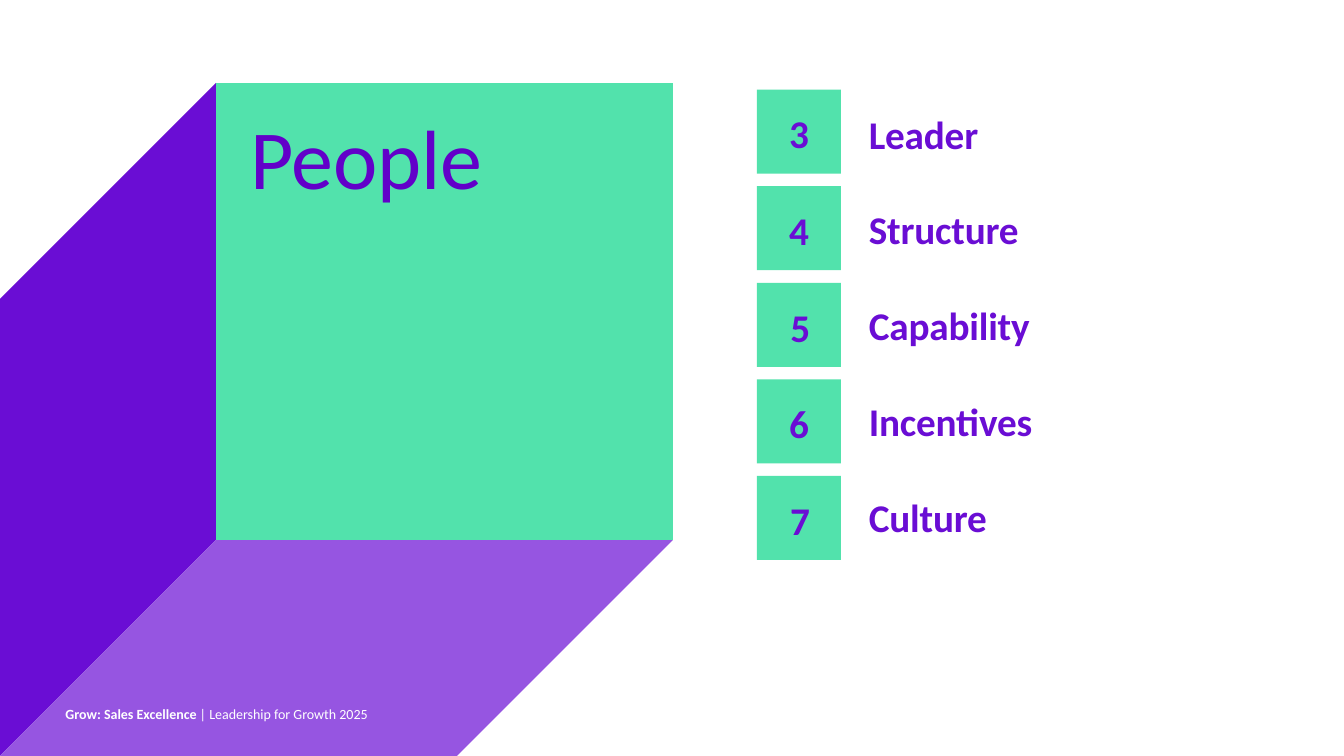
from pptx import Presentation
from pptx.dml.color import RGBColor
from pptx.enum import shapes, text
from pptx.util import Pt

GREEN, PURPLE, LILAC = "52E2AC", "6A0DD4", "9655E1"
TITLE_PURPLE, WHITE = "6200C9", "FFFFFF"
TOPICS = [
    ("3", "Leader", 0),
    ("4", "Structure", 0),
    ("5", "Capability", 2),
    ("6", "Incentives", 0),
    ("7", "Culture", 1.4),
]
LEFT, TOP, SIDE, DEPTH = 154.3, 59.3, 326.4, 154.3
RIGHT, BOTTOM = LEFT + SIDE, TOP + SIDE


def colour(hex_string):
    return RGBColor.from_string(hex_string)


def paint(shape, fill):
    shape.shadow.inherit = False
    shape.fill.solid()
    shape.fill.fore_color.rgb = colour(fill)
    shape.line.fill.background()


def write(shape, runs, size, hue, inset=0, indent=0, spacing=0,
          align=text.PP_ALIGN.LEFT, anchor=text.MSO_ANCHOR.TOP):
    frame = shape.text_frame
    frame.word_wrap = True
    frame.vertical_anchor = anchor
    frame.margin_left = frame.margin_right = frame.margin_bottom = 0
    frame.margin_top = Pt(inset)
    paragraph = frame.paragraphs[0]
    paragraph.alignment = align
    paragraph._p.get_or_add_pPr().set("marL", str(Pt(indent)))
    font = paragraph.font
    font.name, font.size, font.color.rgb = "Calibri", Pt(size), colour(hue)
    for words, bold in runs:
        run = paragraph.add_run()
        run.text = words
        run.font.bold = bold
        if spacing:
            run._r.get_or_add_rPr().set("spc", str(spacing))


def add_square(slide, left, top, side):
    square = slide.shapes.add_shape(
        shapes.MSO_SHAPE.RECTANGLE, Pt(left), Pt(top), Pt(side), Pt(side))
    paint(square, GREEN)
    return square


def add_label(slide, left, top, width, height):
    return slide.shapes.add_textbox(Pt(left), Pt(top), Pt(width), Pt(height))


def add_face(slide, corners, fill):
    points = [(Pt(x), Pt(y)) for x, y in corners]
    builder = slide.shapes.build_freeform(*points[0])
    builder.add_line_segments(points[1:], close=True)
    paint(builder.convert_to_shape(), fill)


def add_cube(slide):
    add_face(slide, [(LEFT, TOP), (0, TOP + DEPTH), (0, 540), (LEFT, BOTTOM)], PURPLE)
    add_face(slide, [(RIGHT, BOTTOM), (LEFT, BOTTOM), (0, 540), (SIDE, 540)], LILAC)
    front = add_square(slide, LEFT, TOP, SIDE)
    write(front, [("People", False)], 60, TITLE_PURPLE,
          inset=16, indent=24.5, spacing=-10)


def add_topic(slide, index, number, name, indent):
    badge = add_square(slide, 540.7, 64 + 69 * index, 60)
    write(badge, [(number, True)], 28, PURPLE, inset=14.4, indent=indent,
          spacing=-30, align=text.PP_ALIGN.CENTER)
    label = add_label(slide, 619.9, 77.8 + 68.4 * index, 185, 34.6)
    write(label, [(name, True)], 28, PURPLE, inset=0.7, indent=0.7, spacing=-10)


def main():
    deck = Presentation()
    deck.slide_width, deck.slide_height = Pt(960), Pt(540)
    slide = deck.slides.add_slide(deck.slide_layouts[6])
    add_cube(slide)
    for index, topic in enumerate(TOPICS):
        add_topic(slide, index, *topic)
    footer = add_label(slide, 46.8, 504, 307.4, 12.2)
    write(footer, [("Grow: Sales Excellence ", True),
                   ("| Leadership for Growth 2025", False)],
          10, WHITE, anchor=text.MSO_ANCHOR.MIDDLE)
    deck.save("out.pptx")


if __name__ == "__main__":
    main()
